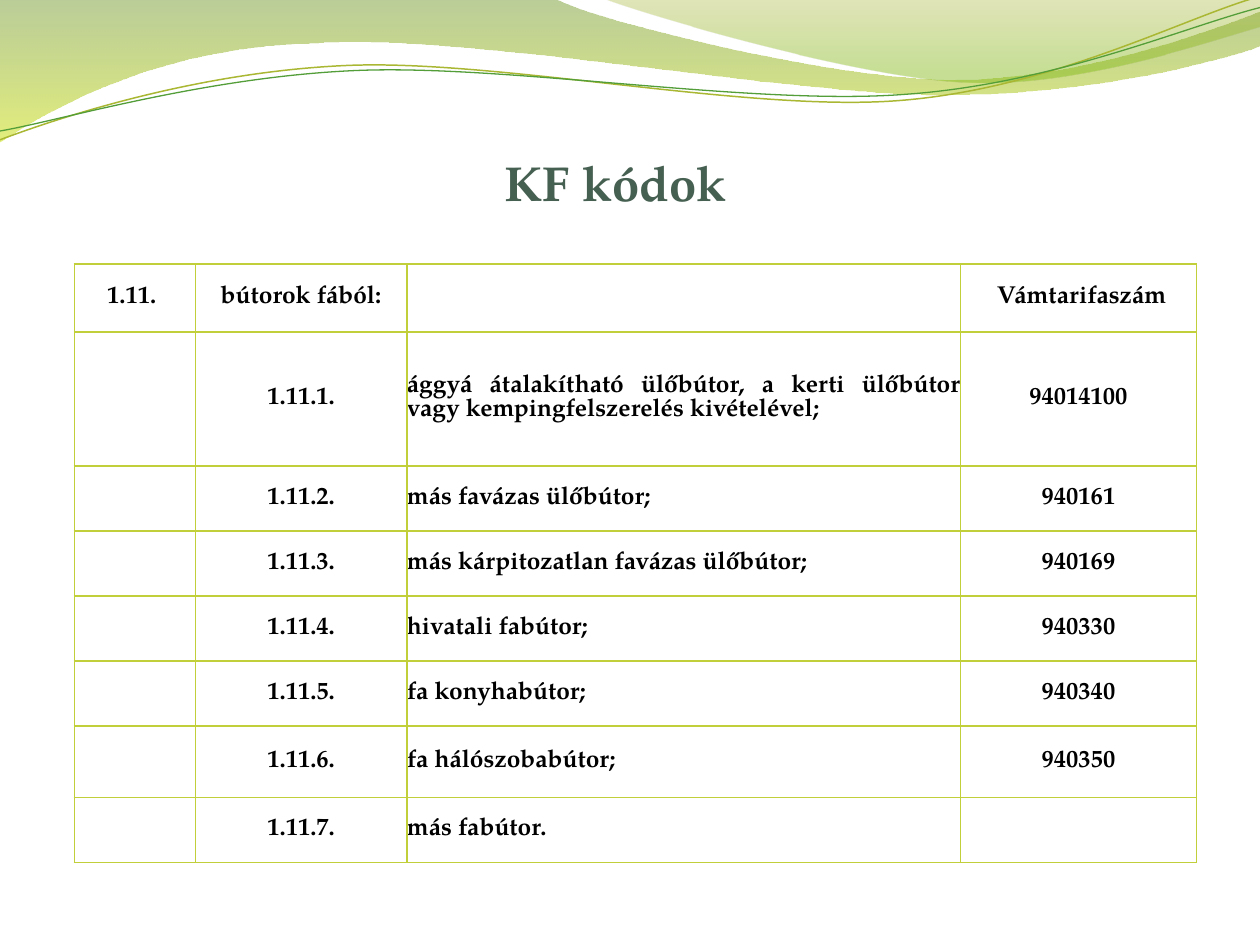
from dataclasses import dataclass

import lxml.etree
import pptx
import pptx.dml.color
import pptx.enum.text
import pptx.oxml.ns
import pptx.util

ALIGN = pptx.enum.text.PP_ALIGN
ANCHOR = pptx.enum.text.MSO_ANCHOR
qn = pptx.oxml.ns.qn


@dataclass(frozen=True)
class Theme:
    font: str = "TeX Gyre Pagella"
    title_color: str = "455F51"
    text_color: str = "000000"
    border: str = "C0CF3A"
    olive_line: str = "A9B733"
    green_line: str = "549E39"
    # Gradient stops: position, colour, opacity in percent
    wide_wave: tuple = ((0, "69921C", 45), (1, "CCE10F", 55))
    right_wave: tuple = ((0, "9BAA1A", 30), (0.8, "81BA16", 45))
    title_size: float = 28
    table_size: float = 14
    table_leading: float = 13.7


def rgb(value):
    return pptx.dml.color.RGBColor.from_string(value)


def write(frame, text, *, font, size, color, align, anchor=None, leading=None):
    """Put one formatted paragraph into a text frame."""
    frame.word_wrap = True
    if anchor is not None:
        frame.vertical_anchor = anchor
    paragraph = frame.paragraphs[0]
    paragraph.alignment = align
    if leading:
        paragraph.line_spacing = pptx.util.Pt(leading)
    run = paragraph.add_run()
    run.text = text
    run.font.name = font
    run.font.size = pptx.util.Pt(size)
    run.font.bold = True
    run.font.color.rgb = rgb(color)


class SlideBuilder:
    """Places elements on a grid of 100 columns by 75 rows."""

    FINE = 1000  # outline steps per grid column

    def __init__(self, deck, theme):
        self.theme = theme
        self.slide = deck.slides.add_slide(deck.slide_layouts[6])
        self.unit = deck.slide_width / 100

    def length(self, cells):
        return pptx.util.Emu(round(cells * self.unit))

    def outline(self, start, segments, closed):
        """Segments of 2 numbers are straight, of 6 numbers cubic curves."""
        numbers = [value * self.FINE for segment in segments for value in segment]
        builder = self.slide.shapes.build_freeform(
            *(value * self.FINE for value in start), scale=self.unit / self.FINE)
        builder.add_line_segments(list(zip(numbers[::2], numbers[1::2])), close=closed)
        shape = builder.convert_to_shape()
        shape.shadow.inherit = False

        # Merge the three steps of each curve into one Bezier segment
        steps = iter(list(shape.element.spPr.iter(qn("a:lnTo"))))
        for segment in segments:
            first = next(steps)
            if len(segment) == 6:
                curve = lxml.etree.Element(qn("a:cubicBezTo"))
                first.addprevious(curve)
                for step in (first, next(steps), next(steps)):
                    curve.append(step[0])
                    step.getparent().remove(step)
        return shape

    def wave(self, start, segments, stops):
        shape = self.outline(start, segments, closed=True)
        shape.line.fill.background()
        shape.fill.gradient()
        shape.fill.gradient_angle = 270
        for stop, (position, color, _) in zip(shape.fill.gradient_stops, stops):
            stop.position = position
            stop.color.rgb = rgb(color)
        for node, (_, _, opacity) in zip(shape.element.spPr.iter(qn("a:srgbClr")), stops):
            lxml.etree.SubElement(node, qn("a:alpha")).set("val", str(opacity * 1000))

    def strand(self, start, segments, color, width):
        shape = self.outline(start, segments, closed=False)
        shape.fill.background()
        shape.line.color.rgb = rgb(color)
        shape.line.width = pptx.util.Pt(width)

    def title(self, text, left, top, width, height):
        box = self.slide.shapes.add_textbox(*map(self.length, (left, top, width, height)))
        frame = box.text_frame
        frame.margin_left = frame.margin_right = frame.margin_bottom = 0
        write(frame, text, font=self.theme.font, size=self.theme.title_size,
              color=self.theme.title_color, align=ALIGN.CENTER, anchor=ANCHOR.BOTTOM)

    def border(self, cell):
        properties = cell._tc.get_or_add_tcPr()
        for index, side in enumerate(("lnL", "lnR", "lnT", "lnB")):
            line = lxml.etree.Element(qn(f"a:{side}"), w=str(pptx.util.Pt(1)))
            fill = lxml.etree.SubElement(line, qn("a:solidFill"))
            lxml.etree.SubElement(fill, qn("a:srgbClr")).set("val", self.theme.border)
            properties.insert(index, line)

    def table(self, rows, left, top, widths, heights, aligns):
        table = self.slide.shapes.add_table(
            len(rows), len(widths),
            *map(self.length, (left, top, sum(widths), sum(heights)))).table
        table.first_row = table.horz_banding = False
        for column, width in zip(table.columns, widths):
            column.width = self.length(width)
        for row, height, texts in zip(table.rows, heights, rows):
            row.height = self.length(height)
            for cell, text, align in zip(row.cells, texts, aligns):
                cell.fill.background()
                cell.margin_left = cell.margin_right = 0
                cell.margin_top = cell.margin_bottom = 0
                cell.vertical_anchor = ANCHOR.MIDDLE
                self.border(cell)
                if text:
                    write(cell.text_frame, text, font=self.theme.font,
                          size=self.theme.table_size, color=self.theme.text_color,
                          align=align, leading=self.theme.table_leading)


def main():
    deck = pptx.Presentation()
    deck.slide_width = pptx.util.Inches(10)
    deck.slide_height = pptx.util.Inches(7.5)
    theme = Theme()
    page = SlideBuilder(deck, theme)

    # Header waves
    page.wave((0, 0), [(44, -0.1), (47.5, 1.7, 66.3, 6.3, 75.8, 6.3),
                       (85.3, 6.3, 95.8, 2.6, 100, 0.9), (100.1, 3.6),
                       (98.3, 4.4, 86.9, 7.6, 74.6, 7.5),
                       (62.2, 7.5, 38.1, 2.8, 25.7, 3.4),
                       (12.9, 3.6, 4.6, 8.3, -0.1, 11.3)], theme.wide_wave)
    page.wave((47.9, -0.1), [(50.9, 1.1, 68.2, 6.2, 76.8, 6.5),
                             (85.5, 6.9, 96.1, 3.2, 100, 2.1), (100, 0)],
              theme.right_wave)

    # Header strands
    page.strand((0, 11.1), [(4.8, 9.3, 15.7, 5.7, 27.6, 5.2),
                            (39.5, 4.7, 59.2, 8.9, 71.2, 8),
                            (83.3, 7.1, 93.8, 1.5, 99.7, -0.2)], theme.olive_line, 0.85)
    page.strand((0, 10.4), [(4.7, 9.6, 16.3, 6.1, 28.3, 5.6),
                            (40.2, 5.1, 59.7, 8.4, 71.7, 7.5),
                            (83.6, 6.7, 94.1, 2.1, 100, 0.6)], theme.green_line, 0.75)

    # Title
    page.title("KF kódok", -1, 5.6, 99.7, 11.2)

    # Customs tariff table
    furniture = [
        ("ággyá átalakítható ülőbútor, a kerti ülőbútor vagy kempingfelszerelés kivételével;",
         "94014100"),
        ("más favázas ülőbútor;", "940161"),
        ("más kárpitozatlan favázas ülőbútor;", "940169"),
        ("hivatali fabútor;", "940330"),
        ("fa konyhabútor;", "940340"),
        ("fa hálószobabútor;", "940350"),
        ("más fabútor.", ""),
    ]
    rows = [("1.11. ", "bútorok fából:", "", " Vámtarifaszám")]
    rows += [("", f"1.11.{number}.", name, tariff)
             for number, (name, tariff) in enumerate(furniture, 1)]
    page.table(rows, 5.9, 20.95, widths=(9.6, 16.8, 43.95, 18.7),
               heights=(5.4, 10.65, 5.16, 5.16, 5.16, 5.16, 5.67, 5.16),
               aligns=(ALIGN.CENTER, ALIGN.CENTER, ALIGN.JUSTIFY, ALIGN.CENTER))

    deck.save("out.pptx")


if __name__ == "__main__":
    main()
